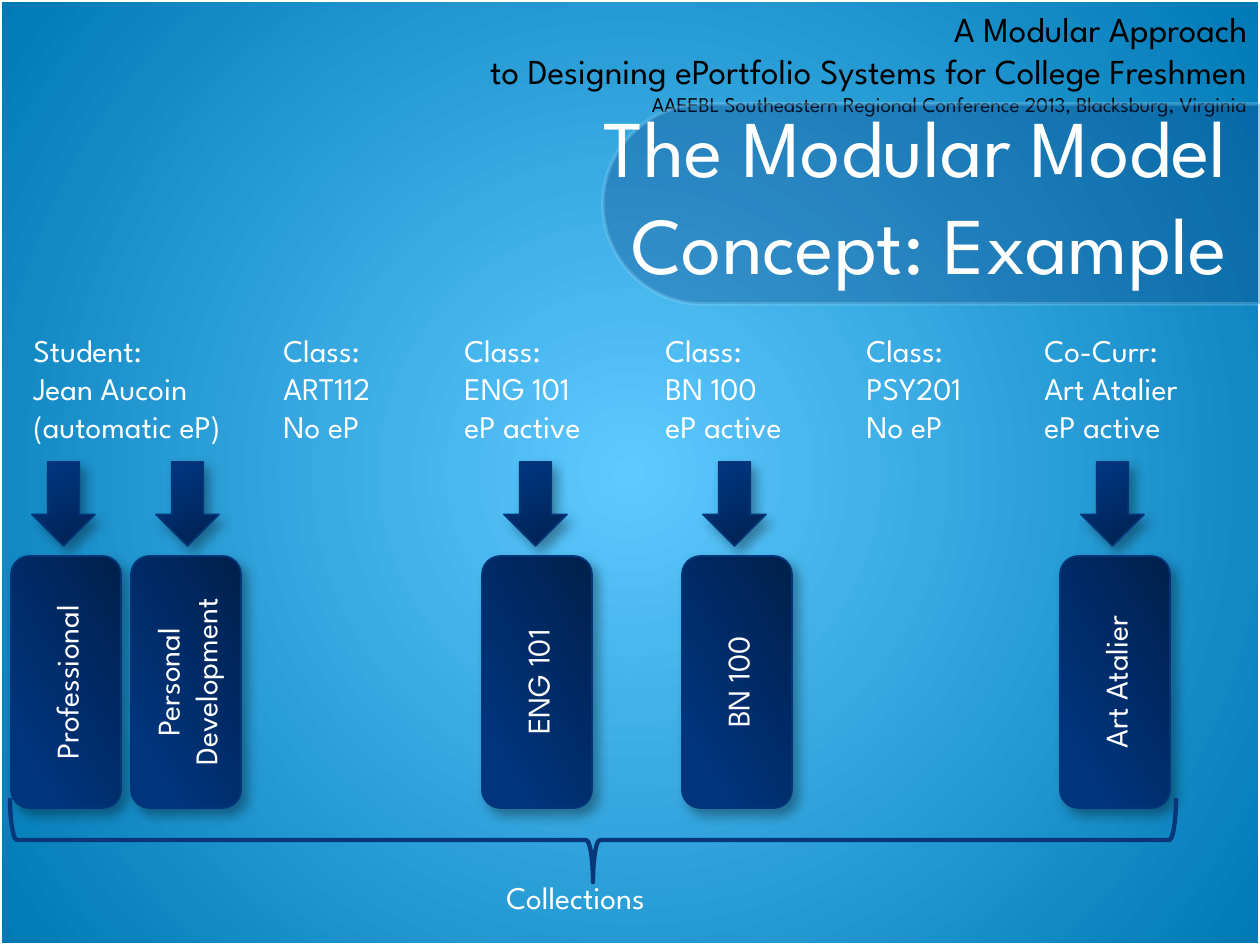
from dataclasses import dataclass

import pptx
import pptx.dml.color
import pptx.enum.shapes
import pptx.enum.text
import pptx.oxml
import pptx.oxml.ns
import pptx.util

RGB = pptx.dml.color.RGBColor
KIND = pptx.enum.shapes.MSO_SHAPE
ALIGN = pptx.enum.text.PP_ALIGN
FIT = pptx.enum.text.MSO_AUTO_SIZE
MID = pptx.enum.text.MSO_ANCHOR.MIDDLE

WHITE = RGB(0xFF, 0xFF, 0xFF)
BLACK = RGB(0, 0, 0)
NAVY = RGB(0x07, 0x37, 0x79)
EDGE = RGB(0x04, 0x35, 0x79)
PALE = RGB(0x8F, 0xD9, 0xFB)
SKY = RGB(0x5D, 0xC9, 0xFF)
OCEAN = RGB(0x00, 0x79, 0xB5)
DARK = RGB(0x00, 0x20, 0x4C)
DEEP = RGB(0x00, 0x34, 0x7C)
BLUE = RGB(0x00, 0x34, 0x7D)

FONT = "League Spartan"
SCALE = 914400 / 126
NS = 'xmlns:a="http://schemas.openxmlformats.org/drawingml/2006/main"'
ROUND = ('<a:path path="circle"><a:fillToRect l="50000" t="50000" '
         'r="50000" b="50000"/></a:path>')
SLANT = '<a:lin ang="14400000" scaled="0"/>'


@dataclass
class Label:
    left: int
    width: int
    lines: tuple[str, ...]


@dataclass
class Module:
    arrow: int
    box: int
    name: str


LABELS = [
    Label(21, 249, ("Student:", "Jean Aucoin", "(automatic eP)")),
    Label(271, 147, ("Class:", "ART112", "No eP")),
    Label(452, 166, ("Class:", "ENG 101", "eP active")),
    Label(653, 166, ("Class:", "BN 100", "eP active")),
    Label(854, 145, ("Class:", "PSY201", "No eP")),
    Label(1032, 185, ("Co-Curr:", "Art Atalier", "eP active")),
]
MODULES = [
    Module(32, -60, "Professional"),
    Module(156, 60, "Personal\nDevelopment"),
    Module(504, 411, "ENG 101"),
    Module(703, 611, "BN 100"),
    Module(1081, 989, "Art Atalier"),
]


def px(*sizes: int) -> list[int]:
    return [pptx.util.Emu(round(size * SCALE)) for size in sizes]


def blend(root, stops: list[tuple], tail: str) -> None:
    marks = "".join(
        f'<a:gs pos="{at * 1000}"><a:srgbClr val="{color}"/></a:gs>'
        for at, color in stops)
    old = root.find(".//" + pptx.oxml.ns.qn("a:gradFill"))
    new = pptx.oxml.parse_xml(
        f'<a:gradFill {NS} rotWithShape="1"><a:gsLst>{marks}</a:gsLst>{tail}</a:gradFill>')
    old.getparent().replace(old, new)


def write(para, text: str, size: int, color: RGB = WHITE) -> None:
    for row, part in enumerate(text.split("\n")):
        if row:
            para.add_line_break()
        if part:
            run = para.add_run()
            run.text = part
            run.font.name = FONT
            run.font.size = pptx.util.Pt(size)
            run.font.color.rgb = color


def shape(slide, kind, area: tuple[int, ...], line: RGB, weight: float, turn: int = 0):
    item = slide.shapes.add_shape(kind, *px(*area))
    item.rotation = turn
    item.fill.background()
    item.line.color.rgb = line
    item.line.width = pptx.util.Pt(weight)
    item.shadow.inherit = False
    return item


def block(slide, kind, area: tuple[int, ...], turn: int = 0):
    item = shape(slide, kind, area, EDGE, 1, turn)
    item.fill.gradient()
    blend(item.element.spPr, [(0, DARK), (80, DEEP), (100, BLUE)], SLANT)
    glow = item.element.spPr.find(pptx.oxml.ns.qn("a:effectLst"))
    glow.append(pptx.oxml.parse_xml(
        f'<a:outerShdw {NS} blurRad="88900" dist="63500" dir="3000000" '
        'rotWithShape="0"><a:srgbClr val="000000"><a:alpha val="35000"/>'
        '</a:srgbClr></a:outerShdw>'))
    return item


def note(slide, area: tuple[int, ...], lines: tuple[str, ...]) -> None:
    frame = slide.shapes.add_textbox(*px(*area)).text_frame
    frame.word_wrap = False
    frame.auto_size = FIT.SHAPE_TO_FIT_TEXT
    for row, text in enumerate(lines):
        para = frame.add_paragraph() if row else frame.paragraphs[0]
        write(para, text, 18)


def header(slide) -> None:
    frame = slide.shapes.add_textbox(*px(98, 1, 1162, 123)).text_frame
    frame.word_wrap = True
    para = frame.paragraphs[0]
    para.alignment = ALIGN.RIGHT
    write(para, "A Modular Approach\n"
          "to Designing ePortfolio Systems for College Freshmen\n", 20, BLACK)
    write(para, "AAEEBL Southeastern Regional Conference 2013, "
          "Blacksburg, Virginia", 12, BLACK)


def banner(slide) -> None:
    tab = shape(slide, KIND.ROUND_2_SAME_RECTANGLE, (832, -125, 200, 658), PALE, 2, 270)
    tab.adjustments[0] = 0.5
    tab.adjustments[1] = 0
    tab.fill.solid()
    tab.fill.fore_color.rgb = NAVY
    for color in tab.element.spPr.iter(pptx.oxml.ns.qn("a:srgbClr")):
        color.append(pptx.oxml.parse_xml(f'<a:alpha {NS} val="30000"/>'))

    title = slide.shapes.title
    title.left, title.top, title.width, title.height = px(315, 126, 924, 136)
    frame = title.text_frame
    frame.auto_size = FIT.NONE
    frame.word_wrap = True
    frame.vertical_anchor = MID
    frame.paragraphs[0].alignment = ALIGN.RIGHT
    write(frame.paragraphs[0], "The Modular Model Concept: Example", 46)
    tab.element.addnext(title.element)


def module(slide, item: Module) -> None:
    block(slide, KIND.DOWN_ARROW, (item.arrow, 462, 63, 84))
    box = block(slide, KIND.ROUNDED_RECTANGLE, (item.box, 627, 252, 110), 270)
    frame = box.text_frame
    frame.word_wrap = True
    frame.vertical_anchor = MID
    frame.paragraphs[0].alignment = ALIGN.CENTER
    write(frame.paragraphs[0], item.name, 18)


def main() -> None:
    deck = pptx.Presentation()
    deck.slide_width, deck.slide_height = px(1260, 945)
    slide = deck.slides.add_slide(deck.slide_layouts[5])
    slide.background.fill.gradient()
    blend(slide.element, [(0, SKY), (100, OCEAN)], ROUND)

    shape(slide, KIND.RECTANGLE, (0, 0, 1260, 945), WHITE, 2)
    header(slide)
    banner(slide)
    for label in LABELS:
        note(slide, (label.left, 325, label.width, 127), label.lines)
    for item in MODULES:
        module(slide, item)
    shape(slide, KIND.LEFT_BRACE, (551, 257, 84, 1166), NAVY, 2.5, 270)
    note(slide, (494, 872, 199, 50), ("Collections",))
    deck.save("out.pptx")


if __name__ == "__main__":
    main()
